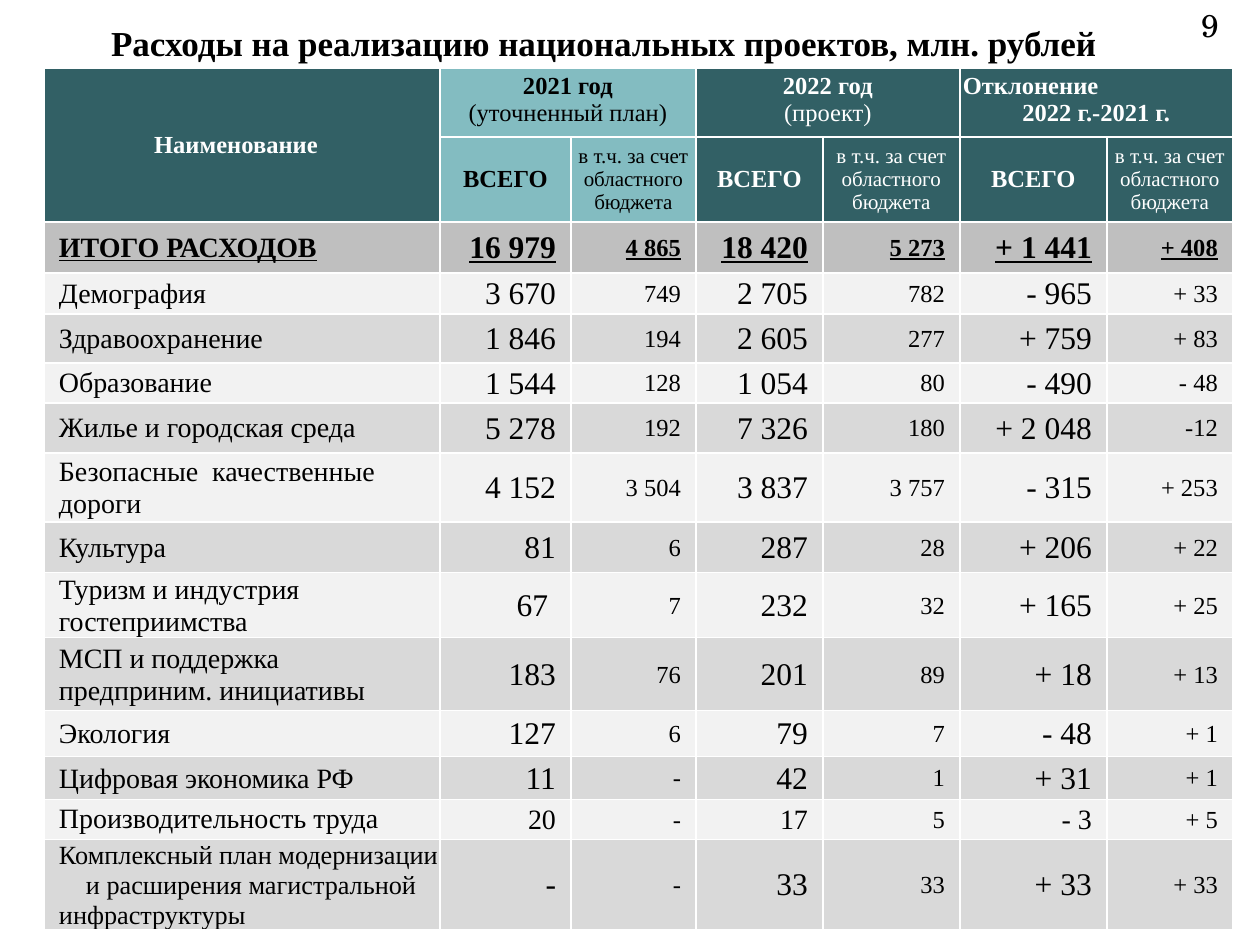
from dataclasses import dataclass

from lxml.etree import SubElement
from pptx import Presentation
from pptx.dml.color import RGBColor
from pptx.enum.text import MSO_ANCHOR, MSO_AUTO_SIZE, PP_ALIGN
from pptx.oxml.ns import qn
from pptx.util import Emu, Pt

PIXELS_PER_INCH = 126


@dataclass(frozen=True)
class Theme:
    font: str = "Times New Roman"
    number_font: str = "TeX Gyre Schola"
    black: str = "000000"
    white: str = "FFFFFF"
    dark: str = "326065"
    light: str = "83BCC1"
    total: str = "BFBFBF"
    stripes: tuple = ("F2F2F2", "D9D9D9")
    title_size: int = 20
    large: int = 18
    label: int = 16
    small: int = 14
    note: int = 12


@dataclass(frozen=True)
class YearGroup:
    name: str
    remark: str
    fill: str
    color: str
    remark_bold: bool = False
    name_align: PP_ALIGN = PP_ALIGN.CENTER


@dataclass(frozen=True)
class Project:
    name: str
    values: tuple
    height: int
    size: int = 16
    large: int = 18
    line_spacing: float | None = None
    second_indent: int = 0


THEME = Theme()
COLUMN_WIDTHS = (396, 131, 125, 127, 137, 147, 126)
HEADER_HEIGHTS = (69, 85)
HEADER_MARGINS = (3, 5, 3, 5)
LABEL_MARGINS = (15, 1, 1, 0)
VALUE_MARGINS = (1, 1, 15, 0)

YEAR_GROUPS = (
    YearGroup("2021 год", "(уточненный план)", THEME.light, THEME.black),
    YearGroup("2022 год", "(проект)", THEME.dark, THEME.white),
    YearGroup("Отклонение", "2022 г.-2021 г.", THEME.dark, THEME.white, True, PP_ALIGN.LEFT),
)
PROJECTS = (
    Project("ИТОГО РАСХОДОВ", ("16 979", "4 865", "18 420", "5 273", "+ 1 441", "+ 408"), 51),
    Project("Демография", ("3 670", "749", "2 705", "782", "- 965", "+ 33"), 41),
    Project("Здравоохранение", ("1 846", "194", "2 605", "277", "+ 759", "+ 83"), 49),
    Project("Образование", ("1 544", "128", "1 054", "80", "- 490", "- 48"), 40),
    Project("Жилье и городская среда", ("5 278", "192", "7 326", "180", "+ 2 048", "-12"), 50),
    Project("Безопасные  качественные\nдороги",
            ("4 152", "3 504", "3 837", "3 757", "- 315", "+ 253"), 69, line_spacing=18),
    Project("Культура", ("81", "6", "287", "28", "+ 206", "+ 22"), 51),
    Project("Туризм и индустрия гостеприимства",
            ("67 ", "7", "232", "32", "+ 165", "+ 25"), 65, line_spacing=18.2),
    Project("МСП и поддержка предприним. инициативы",
            ("183", "76", "201", "89", "+ 18", "+ 13"), 73, line_spacing=18.2),
    Project("Экология", ("127", "6", "79", "7", "- 48", "+ 1"), 46),
    Project("Цифровая экономика РФ", ("11", "-", "42", "1", "+ 31", "+ 1"), 43),
    Project("Производительность труда", ("20", "-", "17", "5", "- 3", "+ 5"), 40,
            large=16, line_spacing=17),
    Project("Комплексный план модернизации\nи расширения магистральной инфраструктуры",
            ("-", "-", "33", "33", "+ 33", "+ 33"), 90,
            size=15, line_spacing=17, second_indent=27),
)


def px(value: int) -> Emu:
    return Emu(round(value * 914400 / PIXELS_PER_INCH))


def write_text(frame, text: str, *, size: int, color: str = THEME.black, bold: bool = False,
               underline: bool = False, align: PP_ALIGN = PP_ALIGN.LEFT,
               font: str = THEME.font, line_spacing: float | None = None) -> None:
    """Fill a text frame with one formatted paragraph per line of text."""
    frame.word_wrap = True
    frame.text = text
    for paragraph in frame.paragraphs:
        paragraph.alignment = align
        if line_spacing:
            paragraph.line_spacing = Pt(line_spacing)
        for run in paragraph.runs:
            run.font.name = font
            run.font.size = Pt(size)
            run.font.bold = bold
            run.font.underline = underline
            run.font.color.rgb = RGBColor.from_string(color)


def style_cell(cell, *, fill: str, margins: tuple, anchor: MSO_ANCHOR = MSO_ANCHOR.MIDDLE) -> None:
    cell.margin_left, cell.margin_top, cell.margin_right, cell.margin_bottom = map(px, margins)
    cell.vertical_anchor = anchor
    properties = cell._tc.get_or_add_tcPr()
    for side in ("lnL", "lnR", "lnT", "lnB"):
        border = SubElement(properties, qn(f"a:{side}"), w=str(Pt(1)))
        border_fill = SubElement(border, qn("a:solidFill"))
        SubElement(border_fill, qn("a:srgbClr"), val=THEME.white)
    cell.fill.solid()
    cell.fill.fore_color.rgb = RGBColor.from_string(fill)


def add_title(slide) -> None:
    title = slide.shapes.title
    title.left, title.top, title.width, title.height = map(px, (-26, 15, 1260, 55))
    frame = title.text_frame
    write_text(frame, "Расходы на реализацию национальных проектов, млн. рублей",
               size=THEME.title_size, bold=True, align=PP_ALIGN.CENTER)
    frame.vertical_anchor = MSO_ANCHOR.TOP
    frame.auto_size = MSO_AUTO_SIZE.NONE


def add_slide_number(slide) -> None:
    frame = slide.shapes.add_textbox(*map(px, (1126, 0, 105, 50))).text_frame
    write_text(frame, "9", size=THEME.large, font=THEME.number_font, align=PP_ALIGN.RIGHT)
    frame.vertical_anchor = MSO_ANCHOR.BOTTOM


def fill_header(table) -> None:
    for row in range(2):
        style_cell(table.cell(row, 0), fill=THEME.dark, margins=(13, 6, 25, 6))
    table.cell(0, 0).merge(table.cell(1, 0))
    write_text(table.cell(0, 0).text_frame, "Наименование", size=THEME.small,
               color=THEME.white, bold=True, align=PP_ALIGN.CENTER)

    for index, group in enumerate(YEAR_GROUPS):
        first = 1 + 2 * index
        for column in (first, first + 1):
            style_cell(table.cell(0, column), fill=group.fill, margins=HEADER_MARGINS,
                       anchor=MSO_ANCHOR.TOP)
            style_cell(table.cell(1, column), fill=group.fill, margins=HEADER_MARGINS)
        heading = table.cell(0, first)
        heading.merge(table.cell(0, first + 1))
        write_text(heading.text_frame, f"{group.name}\n{group.remark}", size=THEME.small,
                   color=group.color, bold=True, align=PP_ALIGN.CENTER)
        name, remark = heading.text_frame.paragraphs
        name.alignment = group.name_align
        remark.runs[0].font.bold = group.remark_bold
        write_text(table.cell(1, first).text_frame, "ВСЕГО", size=THEME.small,
                   color=group.color, bold=True, align=PP_ALIGN.CENTER)
        write_text(table.cell(1, first + 1).text_frame, "в т.ч. за счет областного бюджета",
                   size=THEME.note, color=group.color, align=PP_ALIGN.CENTER)


def fill_project(table, index: int, project: Project) -> None:
    is_total = index == 0
    fill = THEME.total if is_total else THEME.stripes[(index - 1) % 2]
    cells = table.rows[index + len(HEADER_HEIGHTS)].cells
    label, *value_cells = cells
    style_cell(label, fill=fill, margins=LABEL_MARGINS)
    write_text(label.text_frame, project.name, size=project.size, bold=is_total,
               underline=is_total, line_spacing=project.line_spacing)
    if project.second_indent:
        properties = label.text_frame.paragraphs[1]._p.get_or_add_pPr()
        properties.set("marL", "0")
        properties.set("indent", str(px(project.second_indent)))
    for column, (cell, value) in enumerate(zip(value_cells, project.values)):
        style_cell(cell, fill=fill, margins=VALUE_MARGINS)
        write_text(cell.text_frame, value, size=THEME.small if column % 2 else project.large,
                   bold=is_total, underline=is_total, align=PP_ALIGN.RIGHT)


def add_expense_table(slide) -> None:
    heights = HEADER_HEIGHTS + tuple(project.height for project in PROJECTS)
    table = slide.shapes.add_table(len(heights), len(COLUMN_WIDTHS), px(44), px(68),
                                   px(sum(COLUMN_WIDTHS)), px(sum(heights))).table
    table.first_row = table.horz_banding = False
    for column, width in zip(table.columns, COLUMN_WIDTHS):
        column.width = px(width)
    for row, height in zip(table.rows, heights):
        row.height = px(height)
    fill_header(table)
    for index, project in enumerate(PROJECTS):
        fill_project(table, index, project)


def main() -> None:
    presentation = Presentation()
    presentation.slide_width, presentation.slide_height = px(1260), px(945)
    slide = presentation.slides.add_slide(presentation.slide_layouts[5])
    add_title(slide)
    add_expense_table(slide)
    add_slide_number(slide)
    presentation.save("out.pptx")


if __name__ == "__main__":
    main()
